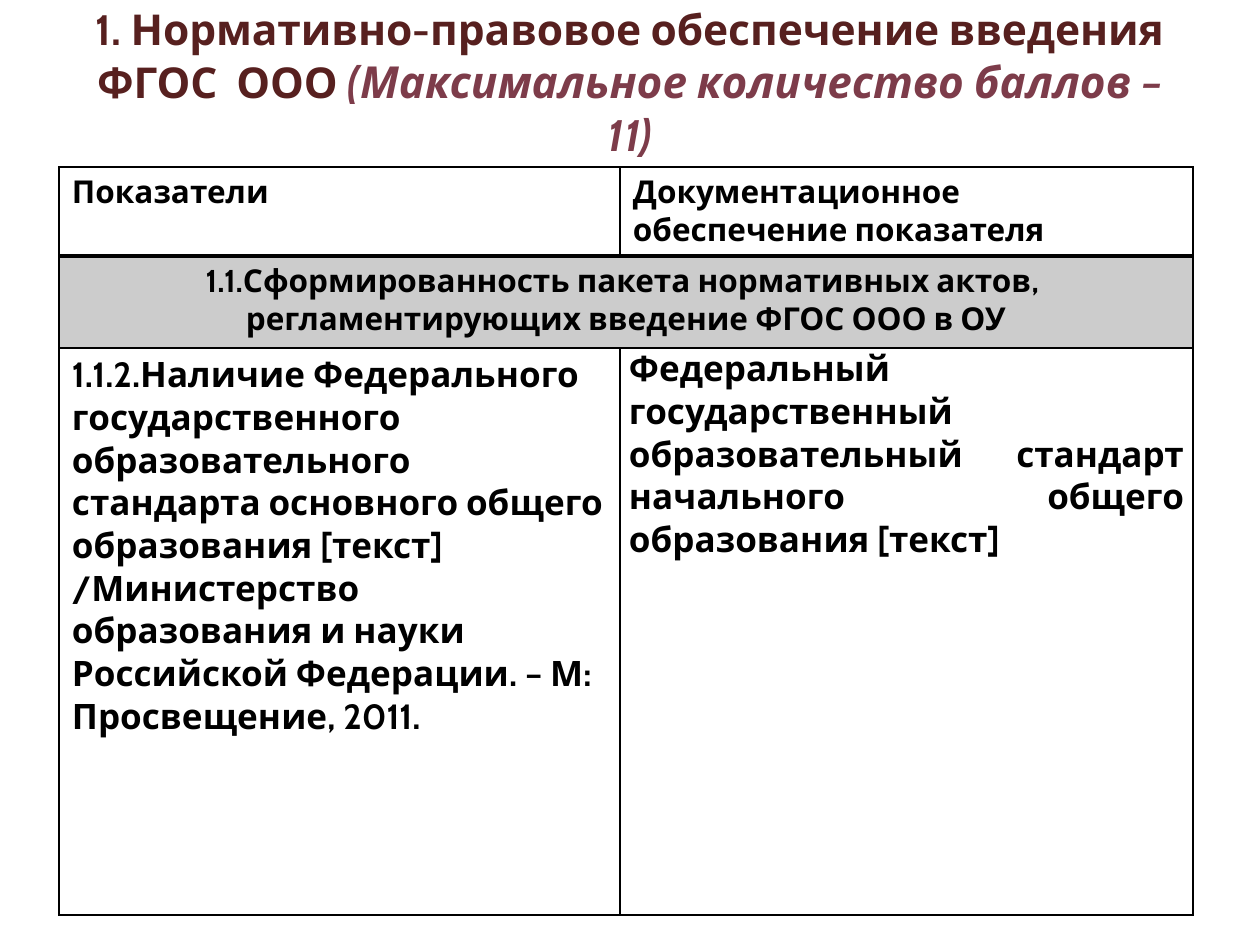
"""Build the slide on regulatory support for the new education standard."""
from lxml.etree import SubElement
from pptx import Presentation
from pptx.dml.color import RGBColor
from pptx.enum.text import MSO_ANCHOR as Anchor, PP_ALIGN as Align
from pptx.oxml.ns import qn
from pptx.util import Emu, Pt

SCALE = 914400 / 126
FONT = "Cabin"
BLACK = "000000"
COLUMNS = (561, 573)
ROWS = (89, 92, 567)


def px(length):
    return Emu(round(length * SCALE))


def color(value):
    return RGBColor.from_string(value)


def assign(target, values):
    for name, value in values.items():
        setattr(target, name, value)


def add_span(para, text, size, ink=BLACK, italic=False):
    span = para.add_run()
    span.text = text
    assign(span.font, {"name": FONT, "size": Pt(size), "bold": True, "italic": italic})
    span.font.color.rgb = color(ink)


def add_title(page, bounds, spans):
    frame = page.shapes.add_textbox(*map(px, bounds)).text_frame
    assign(frame, {"word_wrap": True, "vertical_anchor": Anchor.BOTTOM,
                   "margin_bottom": px(18)})
    para = frame.paragraphs[0]
    para.alignment = Align.CENTER
    for span in spans:
        add_span(para, *span)


def set_borders(cell, widths):
    properties = cell._tc.get_or_add_tcPr()
    for place, (side, width) in enumerate(widths.items()):
        line = SubElement(properties, qn(f"a:ln{side}"), w=str(Pt(width)))
        fill = SubElement(line, qn("a:solidFill"))
        SubElement(fill, qn("a:srgbClr"), val=BLACK)
        properties.insert(place, line)


def fill_cell(cell, lines, size=18, align=Align.LEFT, margins=(13, 6)):
    side, top = map(px, margins)
    assign(cell, {"margin_left": side, "margin_right": side,
                  "margin_top": top, "margin_bottom": top})
    frame = cell.text_frame
    for index, line in enumerate(lines):
        para = frame.add_paragraph() if index else frame.paragraphs[0]
        para.alignment = align
        add_span(para, line, size)


def add_grid(page, left, top):
    bounds = (left, top, sum(COLUMNS), sum(ROWS))
    table = page.shapes.add_table(len(ROWS), len(COLUMNS), *map(px, bounds)).table
    assign(table, {"first_row": False, "horz_banding": False})
    for column, width in zip(table.columns, COLUMNS):
        column.width = px(width)
    for index, (row, height) in enumerate(zip(table.rows, ROWS)):
        row.height = px(height)
        for cell in row.cells:
            if index == 1:
                cell.fill.solid()
                cell.fill.fore_color.rgb = color("CCCCCC")
            else:
                cell.fill.background()
            set_borders(cell, {"L": 1, "R": 1, "T": 2 if index == 1 else 1,
                               "B": 2 if index == 0 else 1})
    table.cell(1, 0).merge(table.cell(1, 1))
    return table


def main():
    deck = Presentation()
    assign(deck, {"slide_width": px(1260), "slide_height": px(945)})
    page = deck.slides.add_slide(deck.slide_layouts[6])
    add_title(page, (63, 38, 1134, 140), [
        ("1. Нормативно-правовое обеспечение введения ФГОС  ООО", 24.3, "57201F"),
        (" (Максимальное количество баллов – 11)", 25.2, "7D3C4A", True),
    ])
    table = add_grid(page, 59, 167)
    fill_cell(table.cell(0, 0), ["Показатели"])
    fill_cell(table.cell(0, 1), ["Документационное обеспечение показателя"])
    fill_cell(table.cell(1, 0), [
        "1.1.Сформированность пакета нормативных актов, ",
        "регламентирующих введение ФГОС ООО в ОУ",
    ], align=Align.CENTER)
    fill_cell(table.cell(2, 0), [
        "1.1.2.Наличие Федерального государственного образовательного стандарта "
        "основного общего образования [текст] /Министерство образования и науки "
        "Российской Федерации. – М: Просвещение, 2011.",
    ], size=20)
    fill_cell(table.cell(2, 1), [
        "Федеральный государственный образовательный стандарт "
        "начального общего образования [текст]",
    ], size=20, align=Align.JUSTIFY, margins=(9, 0))
    deck.save("out.pptx")


if __name__ == "__main__":
    main()
